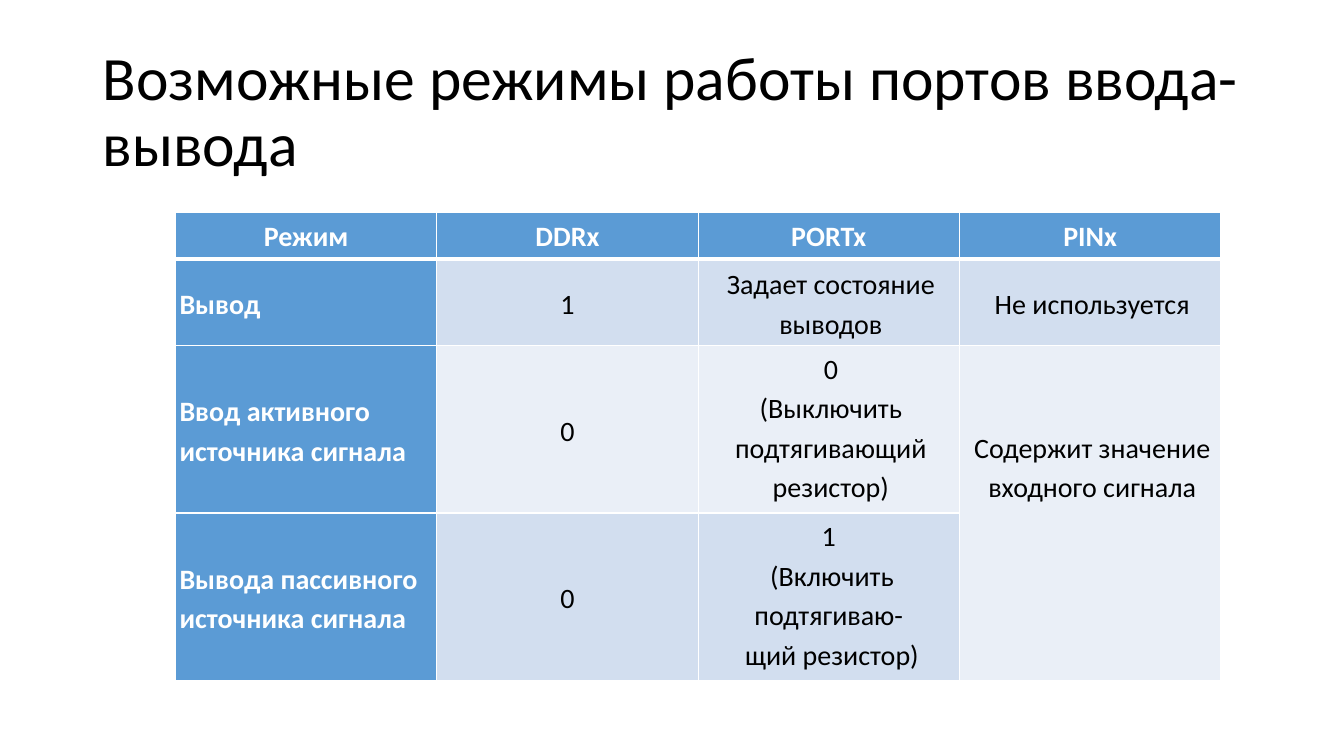
"""Build the slide on the operating modes of input/output ports."""
from dataclasses import dataclass

from lxml import etree
from pptx import Presentation
from pptx.dml.color import RGBColor
from pptx.enum.text import MSO_ANCHOR, MSO_AUTO_SIZE, PP_ALIGN
from pptx.oxml.ns import qn
from pptx.util import Inches, Pt

LEFT, CENTER = PP_ALIGN.LEFT, PP_ALIGN.CENTER
TOP, MIDDLE = MSO_ANCHOR.TOP, MSO_ANCHOR.MIDDLE
NO_AUTOFIT = MSO_AUTO_SIZE.NONE

TITLE = "Возможные режимы работы портов ввода-вывода"
HEADER = ["Режим", "DDRx", "PORTx", "PINx"]
MODES = [
    [["Вывод"], ["1"], ["Задает состояние выводов"], ["Не используется"]],
    [["Ввод активного источника сигнала"], ["0"],
     ["0", "(Выключить подтягивающий резистор)"],
     ["Содержит значение входного сигнала"]],
    [["Вывода пассивного источника сигнала"], ["0"],
     ["1", " (Включить подтягиваю-\n щий резистор)"], None],
]
TITLE_BOX = (0.92, 0.4, 11.5, 1.45)
TABLE_BOX = (1.74, 2.11, 10.37, 4.65)
ROW_HEIGHTS = [0.46, 0.86, 1.66, 1.66]
PAD, INDENT, MERGED_TOP = 0.02, 0.04, 0.8


@dataclass(frozen=True)
class Theme:
    """Colours, font and type sizes."""
    font: str = "Calibri"
    title_size: int = 44
    cell_size: int = 20
    text: str = "000000"
    inverse: str = "FFFFFF"
    accent: str = "5B9BD5"
    bands: tuple = ("EAEFF7", "D2DEEF")
    thin: int = 1
    thick: int = 3


THEME = Theme()


def write(tf, paragraphs, size=THEME.cell_size, color=THEME.text, bold=False,
          align=CENTER, spacing=1.15, indent=0):
    """Fill a text frame with formatted paragraphs."""
    for i, text in enumerate(paragraphs):
        p = tf.add_paragraph() if i else tf.paragraphs[0]
        p.alignment, p.line_spacing = align, spacing
        if indent:
            p._p.get_or_add_pPr().set("marL", str(Inches(indent)))
        for j, line in enumerate(text.split("\n")):
            if j:
                p.add_line_break()
            r = p.add_run()
            r.text = line
            r.font.name, r.font.size, r.font.bold = THEME.font, Pt(size), bold
            r.font.color.rgb = RGBColor.from_string(color)


def set_borders(cell, row):
    """Draw white cell borders with a thick rule under the header."""
    tc_pr = cell._tc.get_or_add_tcPr()
    thick_side = {0: "lnB", 1: "lnT"}.get(row)
    for side in ("lnL", "lnR", "lnT", "lnB"):
        width = THEME.thick if side == thick_side else THEME.thin
        ln = etree.SubElement(tc_pr, qn(f"a:{side}"), w=str(Pt(width)))
        fill = etree.SubElement(ln, qn("a:solidFill"))
        etree.SubElement(fill, qn("a:srgbClr"), val=THEME.inverse)


def add_title(s):
    """Place the title."""
    sp = s.shapes.title
    sp.left, sp.top, sp.width, sp.height = map(Inches, TITLE_BOX)
    tf = sp.text_frame
    tf.word_wrap, tf.auto_size, tf.vertical_anchor = True, NO_AUTOFIT, MIDDLE
    write(tf, [TITLE], size=THEME.title_size, align=LEFT, spacing=0.9)


def add_modes_table(s):
    """Place the table of port modes."""
    rows = [[[name] for name in HEADER], *MODES]
    table = s.shapes.add_table(len(rows), len(HEADER),
                               *map(Inches, TABLE_BOX)).table
    for col in table.columns:
        col.width = Inches(TABLE_BOX[2] / len(HEADER))
    for row, height in zip(table.rows, ROW_HEIGHTS):
        row.height = Inches(height)
    for i, row in enumerate(rows):
        for j, paragraphs in enumerate(row):
            cell = table.cell(i, j)
            strong = i == 0 or j == 0
            cell.margin_left = cell.margin_right = 0
            cell.margin_top = cell.margin_bottom = Inches(PAD)
            set_borders(cell, i)
            cell.fill.solid()
            cell.fill.fore_color.rgb = RGBColor.from_string(
                THEME.accent if strong else THEME.bands[i % 2])
            if paragraphs is None:
                continue
            top = i == 0 or (i > 1 and j > 1)
            cell.vertical_anchor = TOP if top else MIDDLE
            indented = i > 0 and j != 1 and (i, j) != (3, 2)
            write(cell.text_frame, paragraphs, bold=strong,
                  color=THEME.inverse if strong else THEME.text,
                  align=LEFT if i and j == 0 else CENTER,
                  indent=INDENT if indented else 0)
    merged = table.cell(2, 3)
    merged.merge(table.cell(3, 3))
    merged.margin_top = Inches(MERGED_TOP)


def main():
    """Create and save the presentation."""
    prs = Presentation()
    prs.slide_width, prs.slide_height = Inches(13.33), Inches(7.5)
    s = prs.slides.add_slide(prs.slide_layouts.get_by_name("Title Only"))
    add_title(s)
    add_modes_table(s)
    prs.save("out.pptx")


if __name__ == "__main__":
    main()
